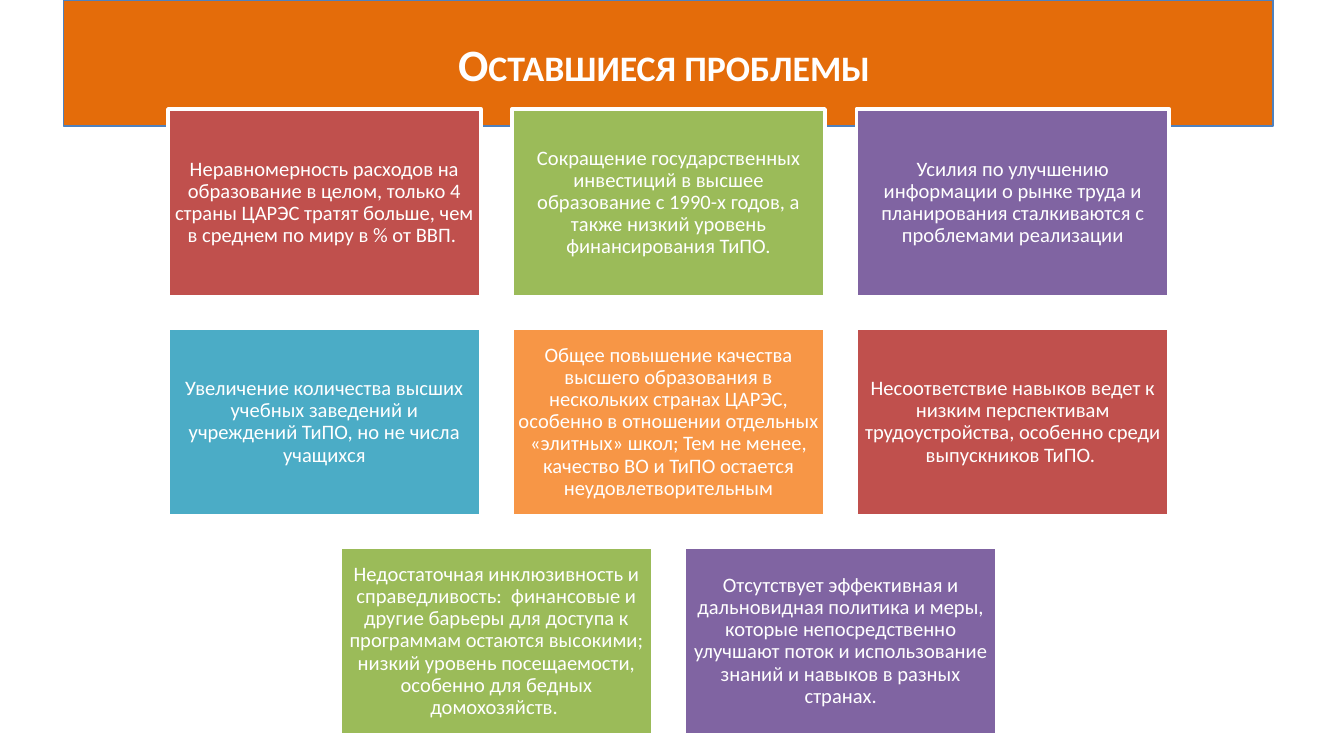
from pptx import Presentation
from pptx.dml.color import RGBColor
from pptx.enum.shapes import MSO_SHAPE as Shape
from pptx.enum.text import MSO_ANCHOR as Anchor, MSO_AUTO_SIZE as AutoSize, PP_ALIGN as Align
from pptx.util import Pt

FONT = "Calibri"
WHITE, ORANGE, BLUE = "FFFFFF", "E46C0A", "4F81BD"
RED, GREEN, PURPLE, TEAL, AMBER = "C0504D", "9BBB59", "8064A2", "4BACC6", "F79646"
CARD_WIDTH, CARD_HEIGHT, GAP = 167.6, 100.6, 16.8
GRID_CENTER, GRID_TOP = 358.2, 58.4

PROBLEM_ROWS = [
    [
        (RED, "Неравномерность расходов на образование в целом, только 4 страны ЦАРЭС "
              "тратят больше, чем в среднем по миру в % от ВВП. "),
        (GREEN, "Сокращение государственных инвестиций в высшее образование с 1990-х годов, "
                "а также низкий уровень финансирования ТиПО."),
        (PURPLE, "Усилия по улучшению информации о рынке труда и планирования сталкиваются "
                 "с проблемами реализации"),
    ],
    [
        (TEAL, "Увеличение количества высших учебных заведений и учреждений ТиПО, "
               "но не числа учащихся"),
        (AMBER, "Общее повышение качества высшего образования в нескольких странах ЦАРЭС, "
                "особенно в отношении отдельных «элитных» школ; Тем не менее, качество ВО "
                "и ТиПО остается неудовлетворительным"),
        (RED, "Несоответствие навыков ведет к низким перспективам трудоустройства, "
              "особенно среди выпускников ТиПО. "),
    ],
    [
        (GREEN, "Недостаточная инклюзивность и справедливость:  финансовые и другие барьеры "
                "для доступа к программам остаются высокими; низкий уровень посещаемости, "
                "особенно для бедных домохозяйств. "),
        (PURPLE, "Отсутствует эффективная и дальновидная политика и меры, которые "
                 "непосредственно улучшают поток и использование знаний и навыков "
                 "в разных странах."),
    ],
]


def color(value):
    return RGBColor.from_string(value)


def paint(box, fill, line, width):
    box.fill.solid()
    box.fill.fore_color.rgb = color(fill)
    box.line.color.rgb = color(line)
    box.line.width = Pt(width)


def write(box, text, size, bold=False):
    frame = box.text_frame
    frame.word_wrap = True
    frame.auto_size = AutoSize.NONE
    frame.vertical_anchor = Anchor.MIDDLE
    para = frame.paragraphs[0]
    para.alignment = Align.CENTER
    span = para.add_run()
    span.text = text
    span.font.name = FONT
    span.font.size = Pt(size)
    span.font.bold = bold
    span.font.color.rgb = color(WHITE)
    return para, span


def add_title(page, text):
    title = page.shapes.title
    title.left, title.top, title.width, title.height = Pt(34), Pt(0), Pt(648), Pt(67.6)
    paint(title, ORANGE, BLUE, 0.75)
    para, span = write(title, text, 24, bold=True)
    span._r.get_or_add_rPr().set("cap", "small")


def add_card(page, left, top, fill, text):
    card = page.shapes.add_shape(
        Shape.RECTANGLE, Pt(left), Pt(top), Pt(CARD_WIDTH), Pt(CARD_HEIGHT))
    card.shadow.inherit = False
    paint(card, fill, WHITE, 2)
    para, span = write(card, text, 11)
    para.line_spacing = 0.9
    frame = card.text_frame
    frame.margin_left = frame.margin_right = Pt(3.3)
    frame.margin_top = frame.margin_bottom = Pt(3.3)


def add_card_row(page, top, problems):
    row_width = len(problems) * (CARD_WIDTH + GAP) - GAP
    left = GRID_CENTER - row_width / 2
    for column, (fill, text) in enumerate(problems):
        add_card(page, left + column * (CARD_WIDTH + GAP), top, fill, text)


def main():
    deck = Presentation()
    deck.slide_width, deck.slide_height = Pt(720), Pt(405)
    page = deck.slides.add_slide(deck.slide_layouts[5])
    add_title(page, "Оставшиеся проблемы ")
    for row, problems in enumerate(PROBLEM_ROWS):
        add_card_row(page, GRID_TOP + row * (CARD_HEIGHT + GAP), problems)
    deck.save("out.pptx")


if __name__ == "__main__":
    main()
